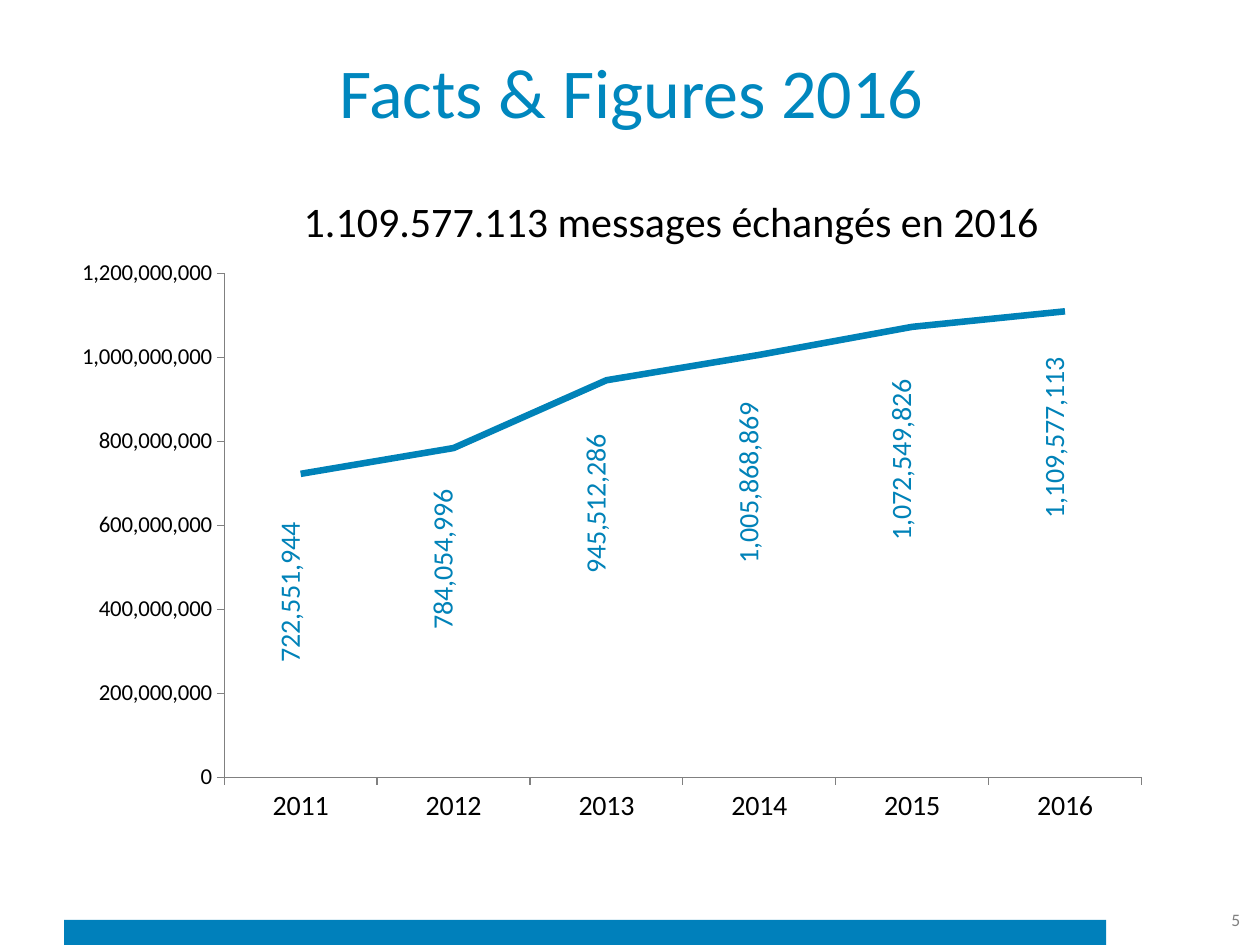
from dataclasses import dataclass

import pptx
import pptx.chart.data
import pptx.dml.color
import pptx.enum.chart
import pptx.enum.shapes
import pptx.enum.text
import pptx.oxml
import pptx.oxml.ns
import pptx.util
from pptx.util import Inches

FONT = "Calibri"
BLUE = "0082B8"
BLACK = "000000"
GREY = "808080"
CHART_TITLE = "1.109.577.113 messages échangés en 2016"
NUMBER_FORMAT = "#,##0"
CHART_WIDTH = 8.84
CHART_HEIGHT = 5.15
LABEL_SHIFT = -0.08
LEADER_LINES_OFF = (
    f'<c:extLst {pptx.oxml.ns.nsdecls("c")}>'
    '<c:ext uri="{CE6537A1-D6FC-4f65-9D91-7224C49458BB}" '
    'xmlns:c15="http://schemas.microsoft.com/office/drawing/2012/chart">'
    '<c15:showLeaderLines val="0"/></c:ext></c:extLst>'
)


@dataclass
class Year:
    name: str
    messages: int
    label_drop: float


@dataclass
class Caption:
    text: str
    left: float
    top: float
    width: float
    height: float
    size: float
    color: str
    align: pptx.enum.text.PP_ALIGN


YEARS = [
    Year("2011", 722551944, 0.35),
    Year("2012", 784054996, 0.29),
    Year("2013", 945512286, 0.39),
    Year("2014", 1005868869, 0.34),
    Year("2015", 1072549826, 0.38),
    Year("2016", 1109577113, 0.33),
]
CAPTIONS = [
    Caption("Facts & Figures 2016", 0.51, 0.21, 9, 1.01, 40, "0087BE",
            pptx.enum.text.PP_ALIGN.CENTER),
    Caption("5", 9.12, 7.1, 0.82, 0.4, 10, GREY, pptx.enum.text.PP_ALIGN.RIGHT),
]


def rgb(value: str) -> pptx.dml.color.RGBColor:
    return pptx.dml.color.RGBColor.from_string(value)


def style_font(font, size: float, color: str) -> None:
    font.name = FONT
    font.size = pptx.util.Pt(size)
    font.bold = False
    font.color.rgb = rgb(color)


def add_caption(page, caption: Caption) -> None:
    box = page.shapes.add_textbox(Inches(caption.left), Inches(caption.top),
                                  Inches(caption.width), Inches(caption.height))
    frame = box.text_frame
    frame.word_wrap = True
    frame.vertical_anchor = pptx.enum.text.MSO_ANCHOR.MIDDLE
    para = frame.paragraphs[0]
    para.alignment = caption.align
    span = para.add_run()
    span.text = caption.text
    style_font(span.font, caption.size, caption.color)


def add_footer_bar(page) -> None:
    bar = page.shapes.add_shape(pptx.enum.shapes.MSO_SHAPE.RECTANGLE,
                                Inches(0.51), Inches(7.3), Inches(8.27), Inches(0.2))
    bar.shadow.inherit = False
    bar.fill.solid()
    bar.fill.fore_color.rgb = rgb("0080BB")
    bar.line.fill.background()


def place(parent, index: int, edge: bool = True, inner: bool = False,
          **inches: float) -> None:
    for old in parent.xpath("./c:layout"):
        parent.remove(old)
    target = '<c:layoutTarget val="inner"/>' if inner else ""
    modes = '<c:xMode val="edge"/><c:yMode val="edge"/>' if edge else ""
    extents = {"x": CHART_WIDTH, "y": CHART_HEIGHT, "w": CHART_WIDTH, "h": CHART_HEIGHT}
    values = "".join(f'<c:{key} val="{inches[key] / extent:.4f}"/>'
                     for key, extent in extents.items() if key in inches)
    parent.insert(index, pptx.oxml.parse_xml(
        f'<c:layout {pptx.oxml.ns.nsdecls("c")}><c:manualLayout>'
        f"{target}{modes}{values}</c:manualLayout></c:layout>"))


def style_axis(axis, size: float) -> None:
    axis.has_major_gridlines = False
    axis.major_tick_mark = pptx.enum.chart.XL_TICK_MARK.OUTSIDE
    axis.minor_tick_mark = pptx.enum.chart.XL_TICK_MARK.NONE
    axis.format.line.color.rgb = rgb(GREY)
    axis.format.line.width = pptx.util.Pt(0.75)
    style_font(axis.tick_labels.font, size, BLACK)


def add_title(chart) -> None:
    chart.has_title = True
    span = chart.chart_title.text_frame.paragraphs[0].add_run()
    span.text = CHART_TITLE
    style_font(span.font, 24, BLACK)
    chart.chart_title.include_in_layout = False
    place(chart.chart_title.element, 1, x=1.92, y=0)


def add_labels(chart, series) -> None:
    for index in range(len(YEARS)):
        label = series.points[index].data_label
        style_font(label.font, 16, BLUE)
        label.position = pptx.enum.chart.XL_LABEL_POSITION.BELOW
    for year, element in zip(YEARS, chart.element.xpath(".//c:dLbl")):
        place(element, 1, edge=False, x=LABEL_SHIFT, y=year.label_drop)
        body = element.xpath("./c:txPr/a:bodyPr")[0]
        body.set("rot", "-5400000")
        body.set("vert", "horz")
    labels = chart.element.xpath(".//c:ser/c:dLbls")[0]
    for leader in labels.xpath("./c:showLeaderLines"):
        leader.set("val", "0")
    labels.append(pptx.oxml.parse_xml(LEADER_LINES_OFF))


def add_message_chart(page) -> None:
    data = pptx.chart.data.CategoryChartData(number_format=NUMBER_FORMAT)
    data.categories = [year.name for year in YEARS]
    data.add_series(CHART_TITLE, [year.messages for year in YEARS])
    chart = page.shapes.add_chart(
        pptx.enum.chart.XL_CHART_TYPE.LINE_STACKED, Inches(0.43), Inches(1.47),
        Inches(CHART_WIDTH), Inches(CHART_HEIGHT), data).chart
    style_font(chart.font, 16, BLACK)
    chart.has_legend = False
    add_title(chart)
    style_axis(chart.category_axis, 16)
    style_axis(chart.value_axis, 13)
    chart.value_axis.minimum_scale = 0
    chart.value_axis.maximum_scale = 1200000000
    chart.value_axis.major_unit = 200000000
    chart.value_axis.tick_labels.number_format = NUMBER_FORMAT
    chart.value_axis.tick_labels.number_format_is_linked = False
    plot = chart.plots[0]
    plot.vary_by_categories = False
    series = plot.series[0]
    series.smooth = False
    series.marker.style = pptx.enum.chart.XL_MARKER_STYLE.NONE
    series.format.line.color.rgb = rgb(BLUE)
    series.format.line.width = pptx.util.Pt(3.75)
    add_labels(chart, series)
    area = chart.element.xpath(".//c:plotArea")[0]
    place(area, 0, inner=True, x=1.35, y=0.7, w=7.28, h=4)


def main() -> None:
    deck = pptx.Presentation()
    deck.slide_width = Inches(10)
    deck.slide_height = Inches(7.5)
    page = deck.slides.add_slide(deck.slide_layouts[6])
    add_footer_bar(page)
    for caption in CAPTIONS:
        add_caption(page, caption)
    add_message_chart(page)
    deck.save("out.pptx")


if __name__ == "__main__":
    main()
